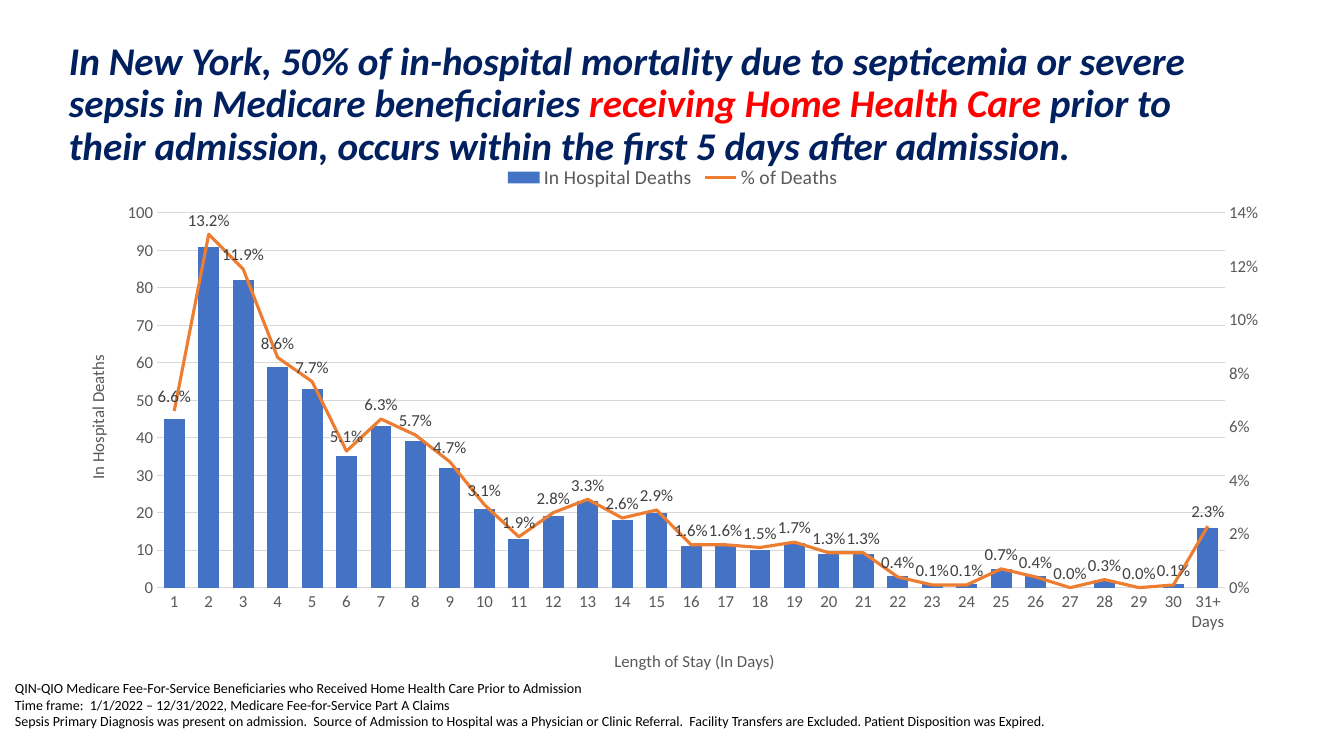
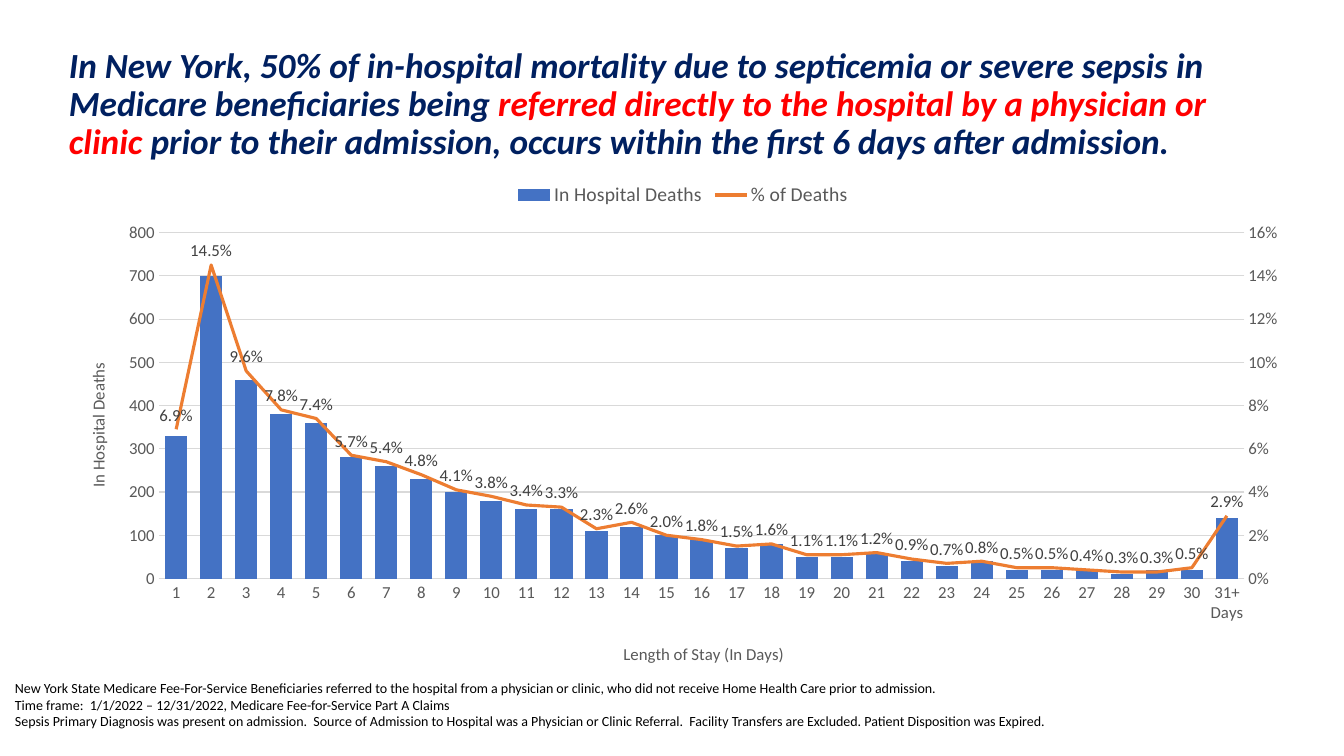
"""Build two slides on in-hospital sepsis deaths by length of stay."""
from dataclasses import dataclass
from typing import Any, Optional

import pptx
import pptx.chart.axis
import pptx.chart.data
import pptx.dml.color
import pptx.enum.chart
import pptx.enum.text
import pptx.oxml
import pptx.oxml.ns
import pptx.util

Pt = pptx.util.Pt
COLORS = {
    "navy": "002060", "red": "FF0000", "black": "000000", "axis": "595959",
    "label": "404040", "grid": "D9D9D9", "bars": "4472C4", "line": "ED7D31",
}
FONT = "Calibri"
NS = pptx.oxml.ns.nsdecls("c")
DAYS = [str(day) for day in range(1, 31)] + ["31+ Days"]
NOTES = [
    "Time frame:  1/1/2022 – 12/31/2022, Medicare Fee-for-Service Part A Claims",
    "Sepsis Primary Diagnosis was present on admission.  Source of Admission to Hospital was a "
    "Physician or Clinic Referral.  Facility Transfers are Excluded. Patient Disposition was Expired.",
]


@dataclass
class Box:
    left: float
    top: float
    width: float
    height: float

    def points(self) -> list[pptx.util.Length]:
        return [Pt(v) for v in (self.left, self.top, self.width, self.height)]


@dataclass
class DeathsSlide:
    title: list[tuple[str, str]]
    title_size: float
    population: str
    chart: Box
    plot: Box
    gap: int
    deaths: list[Optional[int]]
    percents: list[float]
    deaths_max: int
    percent_max: float


TITLE = Box(42, 16.5, 852, 117)
FOOTNOTE = Box(3.6, 481.7, 952.5, 51)
SLIDES = [
    DeathsSlide(
        [("In New York, 50% of in-hospital mortality due to septicemia or severe sepsis in "
          "Medicare beneficiaries ", "navy"),
         ("receiving Home Health Care ", "red"),
         ("prior to their admission, occurs within the first 5 days after admission.", "navy")],
        28,
        "QIN-QIO Medicare Fee-For-Service Beneficiaries who Received Home Health Care Prior to Admission",
        Box(42, 110, 877, 382.5), Box(0.08, 0.11, 0.87, 0.7), 65,
        [45, 91, 82, 59, 53, 35, 43, 39, 32, 21, 13, 19, 23, 18, 20, 11,
         11, 10, 12, 9, 9, 3, 1, 1, 5, 3, None, 2, None, 1, 16],
        [6.6, 13.2, 11.9, 8.6, 7.7, 5.1, 6.3, 5.7, 4.7, 3.1, 1.9, 2.8, 3.3, 2.6, 2.9, 1.6,
         1.6, 1.5, 1.7, 1.3, 1.3, 0.4, 0.1, 0.1, 0.7, 0.4, 0, 0.3, 0, 0.1, 2.3],
        100, 0.14),
    DeathsSlide(
        [("In New York, 50% of in-hospital mortality due to septicemia or severe sepsis in "
          "Medicare beneficiaries being ", "navy"),
         ("referred directly to the hospital by a physician or clinic ", "red"),
         ("prior to their admission, occurs within the first 6 days after admission.", "navy")],
        25.2,
        "New York State Medicare Fee-For-Service Beneficiaries referred to the hospital from a "
        "physician or clinic, who did not receive Home Health Care prior to admission.",
        Box(42, 122.5, 891.5, 363.5), Box(0.08, 0.12, 0.87, 0.68), 58,
        [330, 700, 460, 380, 360, 280, 260, 230, 200, 180, 160, 160, 110, 120, 100, 90,
         70, 80, 50, 50, 60, 40, 30, 40, 20, 20, 20, 10, 20, 20, 140],
        [6.9, 14.5, 9.6, 7.8, 7.4, 5.7, 5.4, 4.8, 4.1, 3.8, 3.4, 3.3, 2.3, 2.6, 2.0, 1.8,
         1.5, 1.6, 1.1, 1.1, 1.2, 0.9, 0.7, 0.8, 0.5, 0.5, 0.4, 0.3, 0.3, 0.5, 2.9],
        800, 0.16),
]


def rgb(name: str) -> pptx.dml.color.RGBColor:
    return pptx.dml.color.RGBColor.from_string(COLORS[name])


def style_font(font: Any, size: float, color: str, strong: bool = False) -> None:
    font.name = FONT
    font.size = Pt(size)
    font.bold = font.italic = strong
    font.color.rgb = rgb(color)


def add_title(s: Any, spec: DeathsSlide) -> None:
    sp = s.shapes.title
    sp.left, sp.top, sp.width, sp.height = TITLE.points()
    tf = sp.text_frame
    tf.word_wrap = True
    tf.auto_size = pptx.enum.text.MSO_AUTO_SIZE.NONE
    tf.vertical_anchor = pptx.enum.text.MSO_ANCHOR.MIDDLE
    p = tf.paragraphs[0]
    p.alignment = pptx.enum.text.PP_ALIGN.LEFT
    p.line_spacing = 0.9
    for text, color in spec.title:
        r = p.add_run()
        r.text = text
        style_font(r.font, spec.title_size, color, True)


def add_footnote(s: Any, population: str) -> None:
    tf = s.shapes.add_textbox(*FOOTNOTE.points()).text_frame
    tf.word_wrap = True
    tf.text = "\n".join([population, *NOTES])
    for p in tf.paragraphs:
        style_font(p.runs[0].font, 10, "black")


def set_layout(parent: Any, index: int, target: str = "", **fractions: float) -> None:
    for old in parent.findall(pptx.oxml.ns.qn("c:layout")):
        parent.remove(old)
    inner = f'<c:layoutTarget val="{target}"/>' if target else ""
    modes = "".join(f'<c:{k}Mode val="edge"/>' for k in ("x", "y"))
    values = "".join(f'<c:{k} val="{v}"/>' for k, v in fractions.items())
    parent.insert(index, pptx.oxml.parse_xml(
        f"<c:layout {NS}><c:manualLayout>{inner}{modes}{values}</c:manualLayout></c:layout>"))


def style_axis(axis: Any, title: str = "") -> None:
    axis.major_tick_mark = axis.minor_tick_mark = pptx.enum.chart.XL_TICK_MARK.NONE
    style_font(axis.tick_labels.font, 12, "axis")
    if title:
        tf = axis.axis_title.text_frame
        tf.text = title
        style_font(tf.paragraphs[0].runs[0].font, 12, "axis")


def style_value_axis(axis: Any, top: float, step: float, number_format: str) -> None:
    axis.minimum_scale, axis.maximum_scale, axis.major_unit = 0, top, step
    axis.tick_labels.number_format = number_format
    axis.tick_labels.number_format_is_linked = False
    axis.format.line.fill.background()


def move_to_right_axis(chart: Any) -> pptx.chart.axis.ValueAxis:
    bars = chart.element.xpath(".//c:barChart")[0]
    ser = bars.findall(pptx.oxml.ns.qn("c:ser"))[1]
    for flag in ser.findall(pptx.oxml.ns.qn("c:invertIfNegative")):
        ser.remove(flag)
    line = pptx.oxml.parse_xml(
        f'<c:lineChart {NS}><c:grouping val="standard"/><c:varyColors val="0"/>'
        '<c:marker val="1"/><c:axId val="5001"/><c:axId val="5002"/></c:lineChart>')
    line.insert(2, ser)
    bars.addnext(line)
    scaling = '<c:scaling><c:orientation val="minMax"/></c:scaling>'
    right = pptx.oxml.parse_xml(
        f'<c:valAx {NS}><c:axId val="5002"/>{scaling}<c:delete val="0"/><c:axPos val="r"/>'
        '<c:tickLblPos val="nextTo"/><c:crossAx val="5001"/><c:crosses val="max"/></c:valAx>')
    hidden = pptx.oxml.parse_xml(
        f'<c:catAx {NS}><c:axId val="5001"/>{scaling}<c:delete val="1"/><c:axPos val="b"/>'
        '<c:crossAx val="5002"/><c:crosses val="autoZero"/></c:catAx>')
    left = chart.element.xpath(".//c:valAx")[0]
    left.addnext(right)
    right.addnext(hidden)
    return pptx.chart.axis.ValueAxis(right)


def style_series(chart: Any, gap: int) -> None:
    bar_plot, line_plot = chart.plots
    bar_plot.gap_width, bar_plot.overlap = gap, -27
    bar_plot.vary_by_categories = False
    fill = bar_plot.series[0].format.fill
    fill.solid()
    fill.fore_color.rgb = rgb("bars")
    percent = line_plot.series[0]
    percent.smooth = False
    percent.marker.style = pptx.enum.chart.XL_MARKER_STYLE.NONE
    percent.format.line.color.rgb = rgb("line")
    percent.format.line.width = Pt(2.25)
    labels = percent.data_labels
    labels.show_value = True
    labels.position = pptx.enum.chart.XL_LABEL_POSITION.ABOVE
    labels.number_format, labels.number_format_is_linked = "0.0%", False
    style_font(labels.font, 12, "label")


def add_deaths_chart(s: Any, spec: DeathsSlide) -> None:
    data = pptx.chart.data.CategoryChartData()
    data.categories = DAYS
    data.add_series("In Hospital Deaths", spec.deaths)
    data.add_series("% of Deaths", [round(v / 100, 3) for v in spec.percents])
    chart = s.shapes.add_chart(
        pptx.enum.chart.XL_CHART_TYPE.COLUMN_CLUSTERED, *spec.chart.points(), data).chart
    chart.has_title = False
    style_font(chart.font, 12, "black")
    chart.has_legend = True
    chart.legend.position = pptx.enum.chart.XL_LEGEND_POSITION.TOP
    chart.legend.include_in_layout = False
    style_font(chart.legend.font, 14, "axis")

    days, deaths = chart.category_axis, chart.value_axis
    style_axis(days, "Length of Stay (In Days)")
    style_axis(deaths, "In Hospital Deaths")
    style_value_axis(deaths, spec.deaths_max, spec.deaths_max // (10 if spec.deaths_max == 100 else 8), "General")
    for line in (days.format.line, deaths.major_gridlines.format.line):
        line.color.rgb = rgb("grid")
        line.width = Pt(0.75)
    right = move_to_right_axis(chart)
    style_axis(right)
    style_value_axis(right, spec.percent_max, 0.02, "0%")
    style_series(chart, spec.gap)

    plot = spec.plot
    set_layout(chart.element.xpath(".//c:plotArea")[0], 0, "inner",
               x=plot.left, y=plot.top, w=plot.width, h=plot.height)
    set_layout(chart.element.xpath(".//c:catAx/c:title")[0], 1, x=0.45, y=0.92)
    death_title = chart.element.xpath(".//c:valAx/c:title")[0]
    set_layout(death_title, 1, x=0.02, y=0.37)
    body = death_title.xpath(".//a:bodyPr")[0]
    body.set("rot", "-5400000")
    body.set("vert", "horz")


def main() -> None:
    prs = pptx.Presentation()
    prs.slide_width, prs.slide_height = Pt(960), Pt(540)
    for spec in SLIDES:
        s = prs.slides.add_slide(prs.slide_layouts[5])
        add_title(s, spec)
        add_footnote(s, spec.population)
        add_deaths_chart(s, spec)
    prs.save("out.pptx")


if __name__ == "__main__":
    main()
